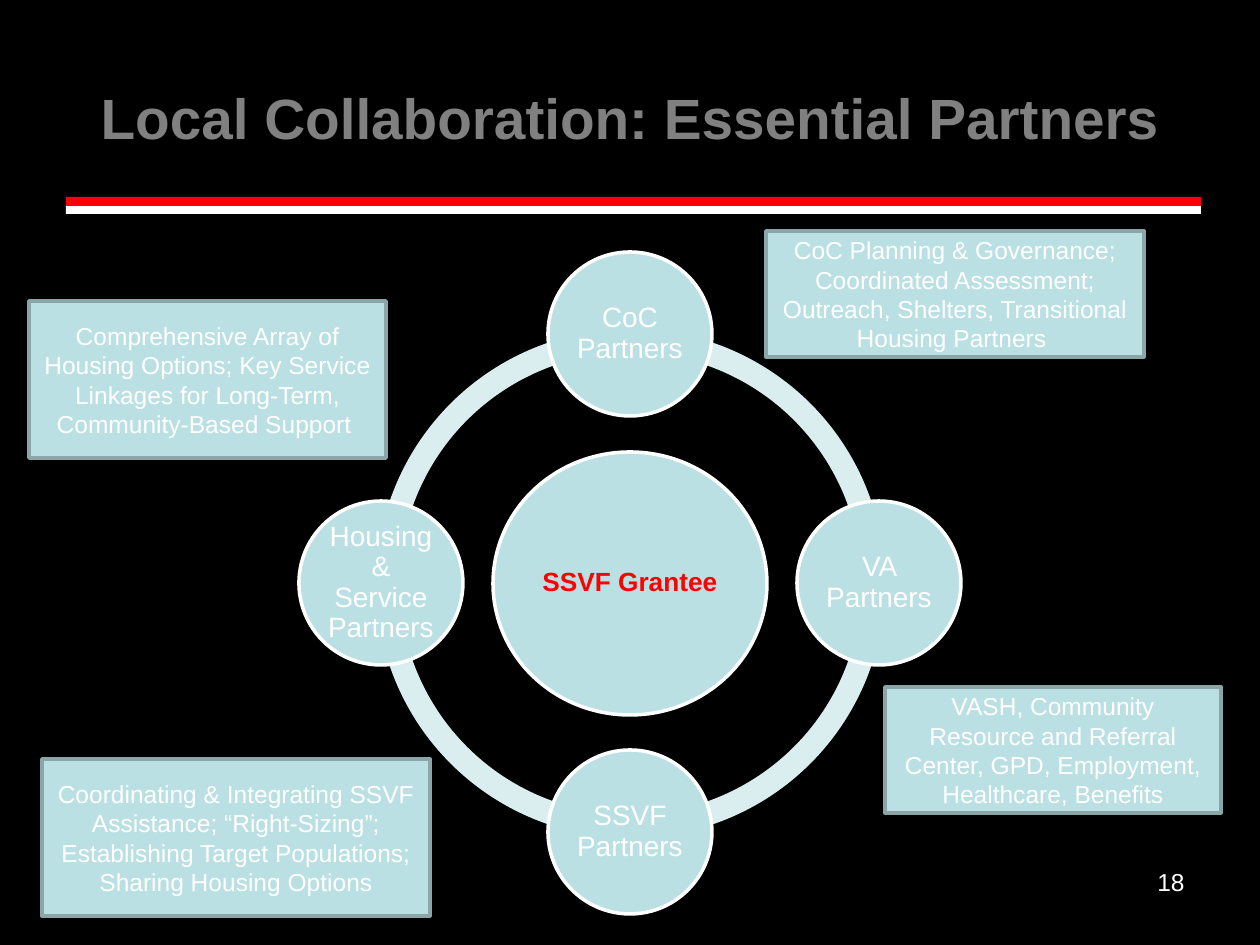
from dataclasses import dataclass

from pptx import Presentation
from pptx.dml.color import RGBColor
from pptx.enum.shapes import MSO_SHAPE
from pptx.enum.text import MSO_ANCHOR, PP_ALIGN
from pptx.util import Pt

PX = 914400 / 126
RECTANGLE, OVAL, BLOCK_ARC = MSO_SHAPE.RECTANGLE, MSO_SHAPE.OVAL, MSO_SHAPE.BLOCK_ARC
TOP, MIDDLE = MSO_ANCHOR.TOP, MSO_ANCHOR.MIDDLE
CENTER, RIGHT = PP_ALIGN.CENTER, PP_ALIGN.RIGHT

BLACK = RGBColor(0x00, 0x00, 0x00)
WHITE = RGBColor(0xFF, 0xFF, 0xFF)
RED = RGBColor(0xFF, 0x00, 0x00)
GRAY = RGBColor(0x80, 0x80, 0x80)
AQUA = RGBColor(0xBB, 0xE0, 0xE3)
PALE_AQUA = RGBColor(0xDA, 0xED, 0xEF)
SLATE = RGBColor(0x8A, 0xA6, 0xA8)

HUB_X, HUB_Y = 630, 583
ORBIT = 249
PARTNER_SIZE = 164
RING_SIZE = 509
RING_THICKNESS = 0.046
QUARTER_TURN = 54


@dataclass(frozen=True)
class Area:
    left: int
    top: int
    width: int
    height: int

    def emu(self) -> list[int]:
        return [round(n * PX) for n in (self.left, self.top, self.width, self.height)]


@dataclass(frozen=True)
class Partner:
    name: str
    across: int
    down: int


@dataclass(frozen=True)
class Note:
    text: str
    area: Area


PARTNERS = [
    Partner("CoC Partners", 0, -1),
    Partner("VA Partners", 1, 0),
    Partner("SSVF Partners", 0, 1),
    Partner("Housing & Service Partners", -1, 0),
]

NOTES = [
    Note("CoC Planning & Governance; Coordinated Assessment; Outreach, Shelters, "
         "Transitional Housing Partners ", Area(766, 231, 378, 126)),
    Note("VASH, Community Resource and Referral Center, GPD, Employment, "
         "Healthcare, Benefits", Area(885, 687, 336, 126)),
    Note("Coordinating & Integrating SSVF Assistance; “Right-Sizing”; "
         "Establishing Target Populations; Sharing Housing Options",
         Area(42, 759, 388, 157)),
    Note("Comprehensive Array of Housing Options; Key Service Linkages for "
         "Long-Term, Community-Based Support ", Area(29, 301, 357, 157)),
]


def centered(x: int, y: int, width: int, height: int) -> Area:
    return Area(x - width // 2, y - height // 2, width, height)


def write(box, text: str, *, size: float, color=WHITE, bold=False, align=CENTER,
          anchor=MIDDLE, spacing=1.0, inset: int | None = None) -> None:
    frame = box.text_frame
    frame.word_wrap = True
    frame.vertical_anchor = anchor
    if inset is not None:
        margin = round(inset * PX)
        frame.margin_left = frame.margin_right = margin
        frame.margin_top = frame.margin_bottom = margin
    para = frame.paragraphs[0]
    para.alignment = align
    para.line_spacing = spacing
    span = para.add_run()
    span.text = text
    span.font.name = "Arial"
    span.font.size = Pt(size)
    span.font.bold = bold
    span.font.color.rgb = color


def draw(page, kind, area: Area, fill: RGBColor, line: RGBColor | None = None):
    shape = page.shapes.add_shape(kind, *area.emu())
    shape.shadow.inherit = False
    shape.fill.solid()
    shape.fill.fore_color.rgb = fill
    if line is None:
        shape.line.fill.background()
    else:
        shape.line.color.rgb = line
        shape.line.width = Pt(2)
    return shape


def draw_ring(page) -> None:
    area = centered(HUB_X, HUB_Y, RING_SIZE, RING_SIZE)
    for quarter in range(4):
        arc = draw(page, BLOCK_ARC, area, PALE_AQUA)
        arc.adjustments[0] = quarter * QUARTER_TURN
        arc.adjustments[1] = (quarter + 1) % 4 * QUARTER_TURN
        arc.adjustments[2] = RING_THICKNESS


def draw_partner(page, partner: Partner) -> None:
    area = centered(HUB_X + partner.across * ORBIT, HUB_Y + partner.down * ORBIT,
                    PARTNER_SIZE, PARTNER_SIZE)
    circle = draw(page, OVAL, area, AQUA, WHITE)
    write(circle, partner.name, size=16, spacing=0.9, inset=2)


def draw_note(page, note: Note) -> None:
    write(draw(page, RECTANGLE, note.area, AQUA, SLATE), note.text, size=14)


def main() -> None:
    deck = Presentation()
    deck.slide_width, deck.slide_height = round(1260 * PX), round(945 * PX)
    page = deck.slides.add_slide(deck.slide_layouts[6])
    page.background.fill.solid()
    page.background.fill.fore_color.rgb = BLACK

    draw(page, RECTANGLE, Area(66, 197, 1135, 9), RED)
    draw(page, RECTANGLE, Area(66, 206, 1135, 8), WHITE)

    title = page.shapes.add_textbox(*Area(63, 38, 1134, 157).emu())
    write(title, "Local Collaboration: Essential Partners", size=32.4, color=GRAY, bold=True)
    number = page.shapes.add_textbox(*Area(903, 861, 294, 65).emu())
    write(number, "18", size=14, align=RIGHT, anchor=TOP)

    draw_ring(page)
    hub = draw(page, OVAL, centered(HUB_X, HUB_Y, 274, 263), AQUA, WHITE)
    write(hub, "SSVF Grantee", size=15, color=RED, bold=True, spacing=0.9, inset=2)
    for partner in PARTNERS:
        draw_partner(page, partner)
    for note in NOTES:
        draw_note(page, note)

    deck.save("out.pptx")


if __name__ == "__main__":
    main()
